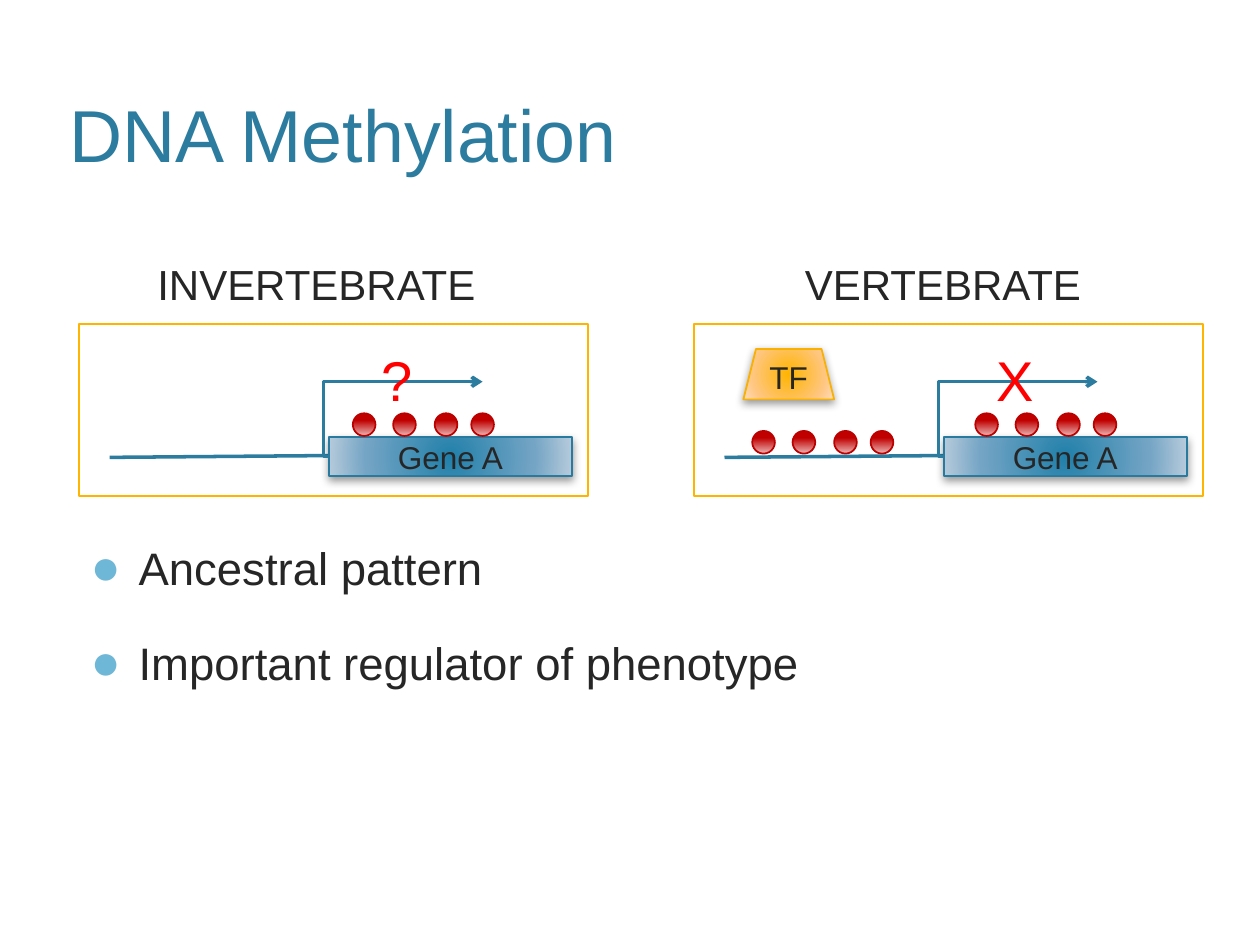
from lxml import etree
from pptx import Presentation
from pptx.dml.color import RGBColor
from pptx.enum.shapes import MSO_CONNECTOR, MSO_SHAPE
from pptx.enum.text import MSO_ANCHOR, MSO_AUTO_SIZE, PP_ALIGN
from pptx.oxml import parse_xml
from pptx.oxml.ns import qn
from pptx.util import Inches, Pt

STRAIGHT, ELBOW = MSO_CONNECTOR.STRAIGHT, MSO_CONNECTOR.ELBOW
RECT, OVAL, TRAP = MSO_SHAPE.RECTANGLE, MSO_SHAPE.OVAL, MSO_SHAPE.TRAPEZOID
LEFT, CENTER = PP_ALIGN.LEFT, PP_ALIGN.CENTER
TOP, MIDDLE, BOTTOM = MSO_ANCHOR.TOP, MSO_ANCHOR.MIDDLE, MSO_ANCHOR.BOTTOM
NO_FIT = MSO_AUTO_SIZE.NONE

TEAL = RGBColor(0x2C, 0x7C, 0x9F)
EDGE = RGBColor(0x28, 0x7A, 0x9E)
GOLD = RGBColor(0xFF, 0xB4, 0x00)
AMBER = RGBColor(0xF9, 0xB0, 0x00)
CRIMSON = RGBColor(0xBC, 0x00, 0x00)
RED = RGBColor(0xFF, 0x00, 0x00)
INK = RGBColor(0x26, 0x26, 0x26)
SKY = RGBColor(0x6F, 0xB7, 0xD7)

NS = 'xmlns:a="http://schemas.openxmlformats.org/drawingml/2006/main"'
RADIAL = ('<a:path path="circle"><a:fillToRect l="100000" t="100000" '
          'r="100000" b="100000"/></a:path>')
DOWN = '<a:lin ang="5400000" scaled="0"/>'
BLUES = [(0, "2180AA"), (69, "75A5C5"), (100, "B8CCDC")]
GOLDS = [(0, "FFB400"), (69, "FFC67F"), (100, "FFDEBD")]
REDS = [(31, "C00000"), (100, "ECB3B3")]
STEPS = (0, 0.32, 0.65, 0.94)


def style(par, size, color, align=LEFT):
    par.alignment = align
    par.font.name = "Arial"
    par.font.size = Pt(size)
    par.font.color.rgb = color


def shade(shape, stops, path):
    marks = "".join(f'<a:gs pos="{pos * 1000}"><a:srgbClr val="{color}"/></a:gs>'
                    for pos, color in stops)
    shape.fill.background()
    old = shape._element.spPr.find(qn("a:noFill"))
    old.getparent().replace(old, parse_xml(
        f'<a:gradFill {NS} rotWithShape="1"><a:gsLst>{marks}</a:gsLst>{path}</a:gradFill>'))


def drop(shape):
    effects = shape._element.spPr.find(qn("a:effectLst"))
    effects.append(parse_xml(
        f'<a:outerShdw {NS} blurRad="{Pt(5)}" dist="{Pt(2)}" dir="5400000" '
        'rotWithShape="0"><a:srgbClr val="000000"><a:alpha val="40000"/>'
        '</a:srgbClr></a:outerShdw>'))


def block(shapes, kind, x, y, w, h, edge):
    shape = shapes.add_shape(kind, Inches(x), Inches(y), Inches(w), Inches(h))
    shape.shadow.inherit = False
    shape.fill.background()
    shape.line.color.rgb = edge
    shape.line.width = Pt(1)
    return shape


def label(shape, text):
    frame = shape.text_frame
    frame.text = text
    frame.word_wrap = False
    frame.vertical_anchor = MIDDLE
    style(frame.paragraphs[0], 18, INK, CENTER)


def note(shapes, x, y, w, h, text, size, color):
    frame = shapes.add_textbox(Inches(x), Inches(y), Inches(w), Inches(h)).text_frame
    frame.word_wrap = True
    frame.text = text
    style(frame.paragraphs[0], size, color)


def wire(shapes, kind, x1, y1, x2, y2):
    line = shapes.add_connector(kind, Inches(x1), Inches(y1), Inches(x2), Inches(y2))
    line.line.color.rgb = TEAL
    line.line.width = Pt(2)
    etree.SubElement(line._element.spPr, qn("a:effectLst"))
    return line


def start(shapes, gene, x, y):
    arrow = wire(shapes, ELBOW, x, y, x + 1.22, y - 0.6)
    arrow.begin_connect(gene, 1)
    guide = etree.SubElement(arrow._element.spPr.find(qn("a:prstGeom")).find(qn("a:avLst")),
                             qn("a:gd"))
    guide.set("name", "adj1")
    guide.set("fmla", "val -3400")
    etree.SubElement(arrow.line._get_or_add_ln(), qn("a:tailEnd")).set("type", "arrow")


def dots(shapes, x, y):
    for step in STEPS:
        dot = block(shapes, OVAL, x + step, y, 0.18, 0.18, CRIMSON)
        shade(dot, REDS, DOWN)


def panel(slide, x, y, mark, shift, bound):
    shapes = slide.shapes.add_group_shape().shapes
    wire(shapes, STRAIGHT, x + 0.24, y + 1.06, x + 3.91, y + 1.03)
    gene = block(shapes, RECT, x + 1.98, y + 0.9, 1.93, 0.31, EDGE)
    shade(gene, BLUES, RADIAL)
    drop(gene)
    label(gene, "Gene A")
    start(shapes, gene, x + 1.98, y + 1.06)
    if bound:
        dots(shapes, x + 0.46, y + 0.85)
        factor = block(shapes, TRAP, x + 0.39, y + 0.2, 0.72, 0.4, AMBER)
        shade(factor, GOLDS, RADIAL)
        drop(factor)
        label(factor, "TF")
    dots(shapes, x + shift, y + 0.71)
    note(shapes, x + 2.3, y + 0.12, 0.71, 0.64, mark, 32, RED)
    block(shapes, RECT, x, y, 4.04, 1.37, GOLD)


def place(shape, x, y, w, h, anchor):
    shape.left, shape.top = Inches(x), Inches(y)
    shape.width, shape.height = Inches(w), Inches(h)
    frame = shape.text_frame
    frame.vertical_anchor = anchor
    frame.auto_size = NO_FIT
    return frame


def head(slide, x, y, w, h):
    frame = place(slide.shapes.title, x, y, w, h, BOTTOM)
    frame.text = "DNA Methylation"
    style(frame.paragraphs[0], 42, TEAL)


def points(slide, x, y, w, h):
    frame = place(slide.placeholders[1], x, y, w, h, TOP)
    frame.text = "Ancestral pattern\nImportant regulator of phenotype"
    for par in frame.paragraphs:
        props = par._p.get_or_add_pPr()
        props.set("marL", str(Inches(0.38)))
        props.set("indent", str(Inches(-0.38)))
        for part in (f'<a:buClr {NS}><a:srgbClr val="{SKY}"/></a:buClr>',
                     f'<a:buSzPct {NS} val="110000"/>',
                     f'<a:buChar {NS} char="●"/>'):
            props.append(parse_xml(part))
        par.line_spacing = 1.1
        par.space_before = Pt(20)
        style(par, 26, INK)


def main():
    deck = Presentation()
    deck.slide_width, deck.slide_height = Inches(10), Inches(7.5)
    slide = deck.slides.add_slide(deck.slide_layouts[1])
    head(slide, 0.45, 0, 9.55, 1.46)
    panel(slide, 5.51, 2.57, "X", 2.23, True)
    note(slide.shapes, 6.29, 2, 2.56, 0.5, "VERTEBRATE", 24, INK)
    panel(slide, 0.63, 2.57, "?", 2.17, False)
    note(slide.shapes, 1.15, 2, 3.29, 0.5, "INVERTEBRATE", 24, INK)
    points(slide, 0.62, 4.19, 8.8, 3.31)
    deck.save("out.pptx")


if __name__ == "__main__":
    main()
